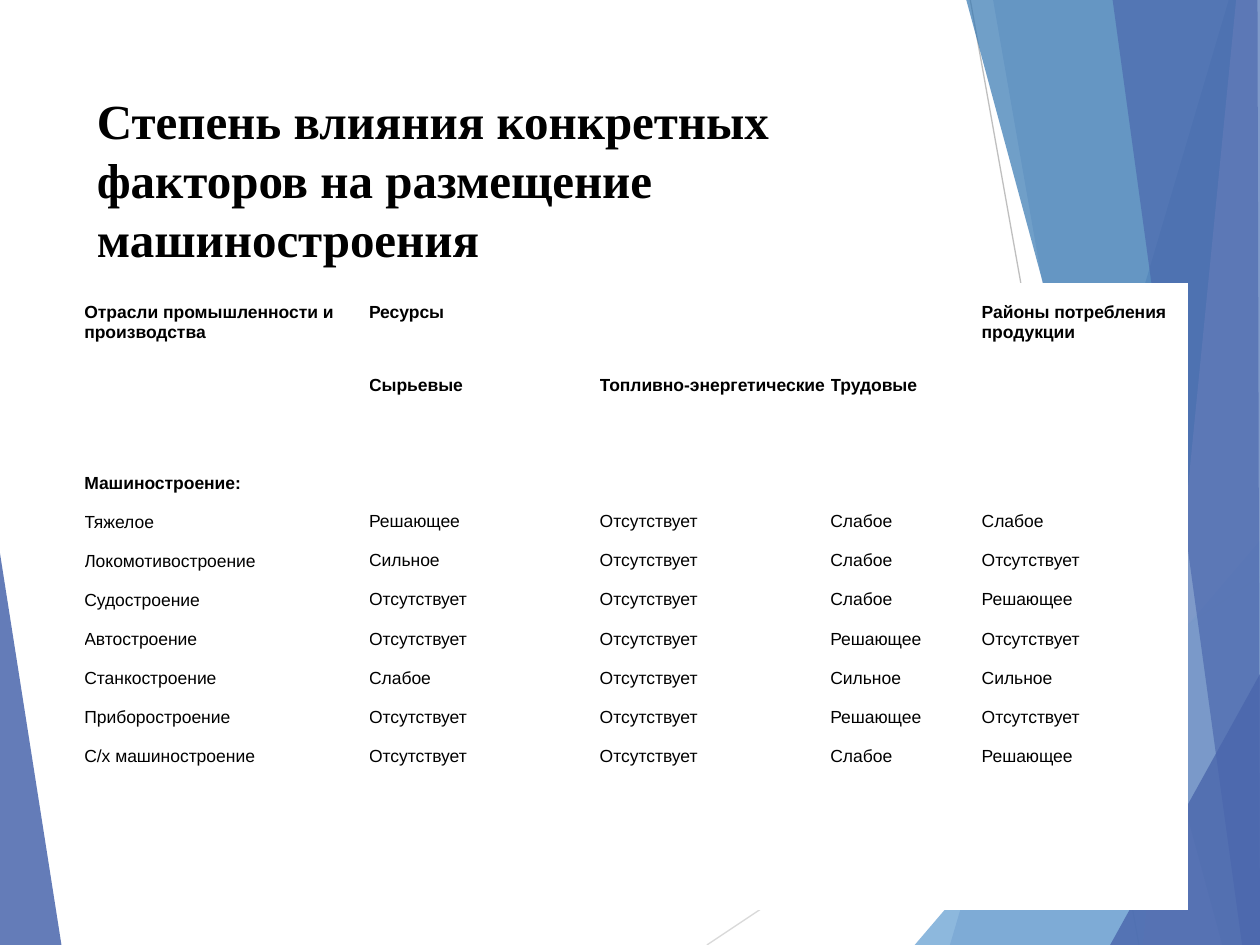
"""Build the slide on the factors that shape where machine building is located."""
from lxml import etree
from pptx import Presentation
from pptx.dml.color import RGBColor
from pptx.enum.shapes import MSO_CONNECTOR
from pptx.enum.text import MSO_ANCHOR, MSO_AUTO_SIZE, PP_ALIGN
from pptx.oxml.ns import qn
from pptx.util import Cm, Pt

STRAIGHT = MSO_CONNECTOR.STRAIGHT
TOP = MSO_ANCHOR.TOP
NO_FIT = MSO_AUTO_SIZE.NONE
LEFT = PP_ALIGN.LEFT

THEME = {
    "title_font": "Times New Roman", "title_size": 28,
    "table_font": "Arial", "table_size": 10,
    "text": "000000", "table_fill": "FFFFFF", "row_gap": 11.2,
    "indigo": "4A66AC", "sky": "629DD1", "blue": "3477B2", "lavender": "90A2CF",
    "pale_line": "D9D9D9", "gray_line": "BFBFBF", "line_width": 0.75,
}
WIDTH, HEIGHT = 25.4, 19.05

TITLE = "Степень влияния конкретных факторов на размещение машиностроения"
HEADERS = [
    ((0, 0), (1, 0), "Отрасли промышленности и производства"),
    ((0, 1), (0, 3), "Ресурсы"),
    ((0, 4), (1, 4), "Районы потребления продукции"),
    ((1, 1), (1, 1), "Сырьевые"),
    ((1, 2), (1, 2), "Топливно-энергетические"),
    ((1, 3), (1, 3), "Трудовые"),
]
GROUP = "Машиностроение:"
INDUSTRIES = [
    ("Тяжелое", "Решающее", "Отсутствует", "Слабое", "Слабое"),
    ("Локомотивостроение", "Сильное", "Отсутствует", "Слабое", "Отсутствует"),
    ("Судостроение", "Отсутствует", "Отсутствует", "Слабое", "Решающее"),
    ("Автостроение", "Отсутствует", "Отсутствует", "Решающее", "Отсутствует"),
    ("Станкостроение", "Слабое", "Отсутствует", "Сильное", "Сильное"),
    ("Приборостроение", "Отсутствует", "Отсутствует", "Решающее", "Отсутствует"),
    ("С/х машиностроение", "Отсутствует", "Отсутствует", "Слабое", "Решающее"),
]
COLUMN_WIDTHS = (5.74, 4.65, 4.65, 3.05, 4.14)
ROW_HEIGHTS = (1.47, 1.96, 9.17)
TABLE_LEFT, TABLE_TOP = 1.7, 5.72
LINE_HEIGHT = 0.39

RAYS = [
    ("pale_line", (14.25, HEIGHT), (WIDTH, 11.62)),
    ("gray_line", (19.56, 0), (22.96, HEIGHT)),
]
FACETS = [
    ("indigo", 85, [(0, 11.15), (1.24, HEIGHT), (0, HEIGHT)]),
    ("indigo", 30, [(24.77, 0), (19.15, HEIGHT), (WIDTH, HEIGHT), (WIDTH, 0)]),
    ("indigo", 20, [(20.02, 0), (23.34, HEIGHT), (WIDTH, HEIGHT), (WIDTH, 0)]),
    ("sky", 72, [(18.44, HEIGHT), (WIDTH, 10.9), (WIDTH, HEIGHT)]),
    ("blue", 70, [(19.48, 0), (24.64, HEIGHT), (WIDTH, HEIGHT), (WIDTH, 0)]),
    ("lavender", 70, [(24.92, 0), (23.04, HEIGHT), (WIDTH, HEIGHT), (WIDTH, 0)]),
    ("indigo", 65, [(22.43, 0), (25.04, HEIGHT), (WIDTH, HEIGHT), (25.35, 0)]),
    ("indigo", 80, [(22.38, HEIGHT), (WIDTH, 13.59), (WIDTH, HEIGHT)]),
]


def color(name):
    return RGBColor.from_string(THEME[name])


def style_run(run, part, bold):
    font = run.font
    font.name = THEME[f"{part}_font"]
    font.size = Pt(THEME[f"{part}_size"])
    font.bold = bold
    font.color.rgb = color("text")


def add_ray(slide, tint, start, end):
    ray = slide.shapes.add_connector(STRAIGHT, *map(Cm, start + end))
    ray.line.color.rgb = color(tint)
    ray.line.width = Pt(THEME["line_width"])
    etree.SubElement(ray._element.spPr, qn("a:effectLst"))


def add_facet(slide, tint, opacity, corners):
    start, *rest = [(Cm(x), Cm(y)) for x, y in corners]
    outline = slide.shapes.build_freeform(*start, scale=1.0)
    outline.add_line_segments(rest, close=True)
    facet = outline.convert_to_shape()
    facet.shadow.inherit = False
    facet.line.fill.background()
    facet.fill.solid()
    facet.fill.fore_color.rgb = color(tint)
    tint_element = facet._element.spPr.find(qn("a:solidFill"))[0]
    etree.SubElement(tint_element, qn("a:alpha"), val=str(opacity * 1000))


def place_title(slide):
    title = slide.shapes.title
    title.left, title.top, title.width, title.height = map(Cm, (1.7, 1.7, 17.63, 2.44))
    frame = title.text_frame
    frame.text = TITLE
    frame.word_wrap = True
    frame.auto_size = NO_FIT
    frame.vertical_anchor = TOP
    paragraph = frame.paragraphs[0]
    paragraph.alignment = LEFT
    style_run(paragraph.runs[0], "title", True)


def fill_cell(cell, entries, bold_count, lines_above=1):
    cell.margin_top = Cm(LINE_HEIGHT * lines_above)
    cell.text_frame.text = "\n".join(entries)
    for index, paragraph in enumerate(cell.text_frame.paragraphs):
        paragraph.space_after = Pt(THEME["row_gap"])
        style_run(paragraph.runs[0], "table", index < bold_count)


def add_factor_table(slide):
    table = slide.shapes.add_table(
        len(ROW_HEIGHTS), len(COLUMN_WIDTHS), Cm(TABLE_LEFT), Cm(TABLE_TOP),
        Cm(sum(COLUMN_WIDTHS)), Cm(sum(ROW_HEIGHTS))).table
    for column, width in zip(table.columns, COLUMN_WIDTHS):
        column.width = Cm(width)
    for row, height in zip(table.rows, ROW_HEIGHTS):
        row.height = Cm(height)
    for cell in table.iter_cells():
        cell.margin_left = cell.margin_right = cell.margin_top = cell.margin_bottom = 0
        cell.fill.solid()
        cell.fill.fore_color.rgb = color("table_fill")
    for first, last, label in HEADERS:
        cell = table.cell(*first)
        if first != last:
            cell.merge(table.cell(*last))
        fill_cell(cell, [label], 1)
    industries, *factors = zip(*INDUSTRIES)
    fill_cell(table.cell(2, 0), [GROUP, *industries], 1)
    for column, levels in enumerate(factors, start=1):
        fill_cell(table.cell(2, column), levels, 0, lines_above=3)


def main():
    deck = Presentation()
    deck.slide_width, deck.slide_height = Cm(WIDTH), Cm(HEIGHT)
    slide = deck.slides.add_slide(deck.slide_layouts[5])
    for ray in RAYS:
        add_ray(slide, *ray)
    for facet in FACETS:
        add_facet(slide, *facet)
    place_title(slide)
    add_factor_table(slide)
    deck.save("out.pptx")


if __name__ == "__main__":
    main()
